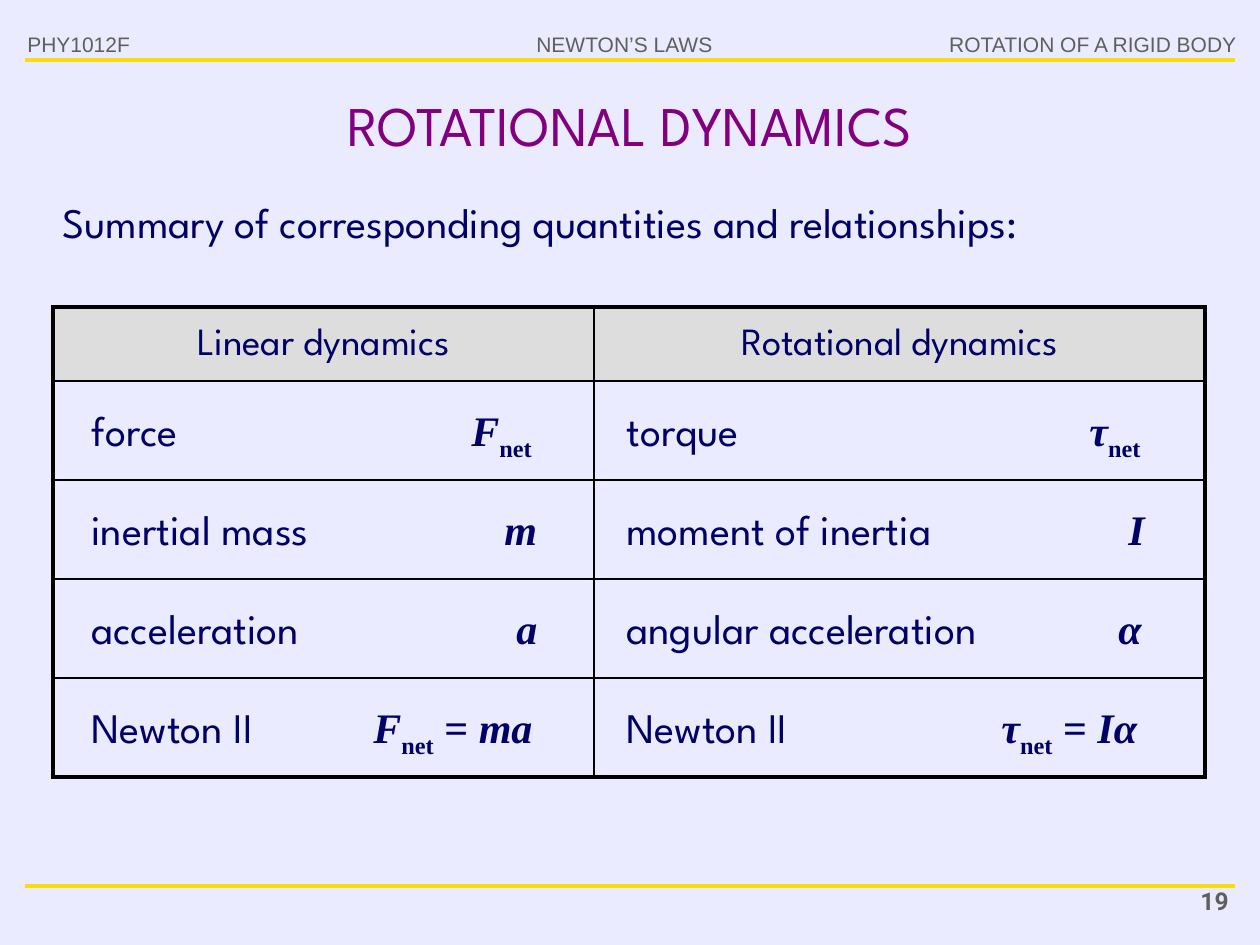
from lxml import etree
from pptx import Presentation
from pptx.dml.color import RGBColor
from pptx.enum import shapes, text
from pptx.oxml.ns import qn
from pptx.util import Emu, Pt

EMU_PER_PX = 914400 / 126
SANS, SERIF, HEADER, NUMBER = "League Spartan", "Times New Roman", "Arial", "Roboto"
NAVY, PURPLE, GREY, YELLOW = "000066", "800080", "5F5F5F", "F8DC0E"
LEFT, CENTER, RIGHT = text.PP_ALIGN.LEFT, text.PP_ALIGN.CENTER, text.PP_ALIGN.RIGHT


def px(length):
    return Emu(round(length * EMU_PER_PX))


def color(value):
    return RGBColor.from_string(value)


class SlideBuilder:
    def __init__(self, presentation, background):
        self.slide = presentation.slides.add_slide(presentation.slide_layouts[6])
        self.slide.background.fill.solid()
        self.slide.background.fill.fore_color.rgb = color(background)

    def add_run(self, paragraph, content, font, size, ink, bold=False, italic=False, subscript=False):
        run = paragraph.add_run()
        run.text = content
        run.font.name, run.font.size = font, Pt(size)
        run.font.color.rgb = color(ink)
        run.font.bold, run.font.italic = bold, italic
        if subscript:
            run.font._element.set("baseline", "-25000")

    def text_box(self, box, align=LEFT, wrap=True, grow=False, spacing=None, anchor=text.MSO_ANCHOR.TOP):
        """Add an empty text box and return its paragraph."""
        frame = self.slide.shapes.add_textbox(*map(px, box)).text_frame
        frame.word_wrap = wrap
        frame.vertical_anchor = anchor
        if grow:
            frame.auto_size = text.MSO_AUTO_SIZE.SHAPE_TO_FIT_TEXT
        paragraph = frame.paragraphs[0]
        paragraph.alignment = align
        if spacing:
            paragraph.line_spacing = spacing
        return paragraph

    def label(self, box, content, font=SANS, size=24, ink=NAVY, bold=False, **layout):
        paragraph = self.text_box(box, **layout)
        self.add_run(paragraph, content, font, size, ink, bold)
        return paragraph

    def formula(self, box, parts):
        paragraph = self.text_box(box, wrap=False, grow=True, spacing=1.1)
        for content, kind in parts:
            self.add_run(paragraph, content, SERIF, 24, NAVY, bold=True,
                         italic=kind == "symbol", subscript=kind == "sub")

    def rule(self, left, right, y):
        line = self.slide.shapes.add_connector(
            shapes.MSO_CONNECTOR.STRAIGHT, px(left), px(y), px(right), px(y))
        line.line.color.rgb = color(YELLOW)
        line.line.width = Pt(1.75)
        etree.SubElement(line._element.spPr, qn("a:effectLst"))

    def cell_borders(self, cell, widths):
        properties = cell._tc.get_or_add_tcPr()
        for index, (side, width) in enumerate(zip("LRTB", widths)):
            border = etree.Element(qn(f"a:ln{side}"), w=str(Pt(width)))
            fill = etree.SubElement(border, qn("a:solidFill"))
            etree.SubElement(fill, qn("a:srgbClr"), val="000000")
            properties.insert(index, border)

    def table(self, left, top, column_widths, row_heights, headings):
        rows, columns = len(row_heights), len(column_widths)
        table = self.slide.shapes.add_table(
            rows, columns, px(left), px(top), px(sum(column_widths)), px(sum(row_heights))).table
        table.first_row = table.horz_banding = False
        for column, width in zip(table.columns, column_widths):
            column.width = px(width)
        for row, height in zip(table.rows, row_heights):
            row.height = px(height)
        for r in range(rows):
            for c in range(columns):
                cell = table.cell(r, c)
                cell.fill.background()
                outer = (c == 0, c == columns - 1, r == 0, r == rows - 1)
                self.cell_borders(cell, [2.25 if edge else 1 for edge in outer])
        for c, heading in enumerate(headings):
            cell = table.cell(0, c)
            cell.fill.solid()
            cell.fill.fore_color.rgb = color("DDDDDD")
            cell.vertical_anchor = text.MSO_ANCHOR.MIDDLE
            paragraph = cell.text_frame.paragraphs[0]
            paragraph.alignment, paragraph.line_spacing = CENTER, 1.1
            self.add_run(paragraph, heading, SANS, 22, NAVY)


def main():
    presentation = Presentation()
    presentation.slide_width, presentation.slide_height = px(1260), px(945)
    builder = SlideBuilder(presentation, "EBEBFF")

    # Header and footer
    for y in (60, 886):
        builder.rule(25, 1235, y)
    header = dict(font=HEADER, size=12, ink=GREY)
    builder.label((523, 25, 203, 38), "NEWTON’S LAWS", align=CENTER, wrap=False, grow=True, **header)
    builder.label((930, 25, 319, 38), "ROTATION OF A RIGID BODY", align=RIGHT, wrap=False, grow=True, **header)
    builder.label((15, 25, 149, 40), "PHY1012F", **header)
    builder.label((1111, 880, 130, 46), "19", NUMBER, 14, GREY, bold=True, align=RIGHT)

    # Title and introduction
    builder.label((63, 79, 1134, 91), "ROTATIONAL DYNAMICS", size=32, ink=PURPLE,
                  align=CENTER, anchor=text.MSO_ANCHOR.MIDDLE)
    intro = builder.label((25, 185, 1210, 68), "Summary of corresponding quantities and relationships:",
                          grow=True, spacing=1.1)
    intro._p.get_or_add_pPr().set("marL", str(px(25)))

    # Table grid
    table_top, heading_height, row_height = 307, 74, 99
    builder.table(53, table_top, [541, 611], [heading_height] + [row_height] * 4,
                  ["Linear dynamics", "Rotational dynamics"])

    # Quantities: name, name width, formula width, formula parts
    net, equals = ("net", "sub"), (" = ", "plain")
    force, torque = ("F", "symbol"), ("τ", "symbol")
    linear = [
        ("force", 132, 91, [force, net]),
        ("inertial mass", 286, 58, [("m", "symbol")]),
        ("acceleration", 281, 46, [("a", "symbol")]),
        ("Newton II", 218, 189, [force, net, equals, ("ma", "symbol")]),
    ]
    rotational = [
        ("torque", 160, 81, [torque, net]),
        ("moment of inertia", 382, 42, [("I", "symbol")]),
        ("angular acceleration", 449, 52, [("α", "symbol")]),
        ("Newton II", 218, 169, [torque, net, equals, ("Iα", "symbol")]),
    ]
    for left, right, quantities in ((79, 550, linear), (614, 1158, rotational)):
        for row, (name, name_width, formula_width, parts) in enumerate(quantities):
            top = table_top + heading_height + 12 + row * row_height
            builder.label((left, top, name_width, 68), name, wrap=False, grow=True, spacing=1.1)
            builder.formula((right - formula_width, top, formula_width, 68), parts)

    presentation.save("out.pptx")


if __name__ == "__main__":
    main()
